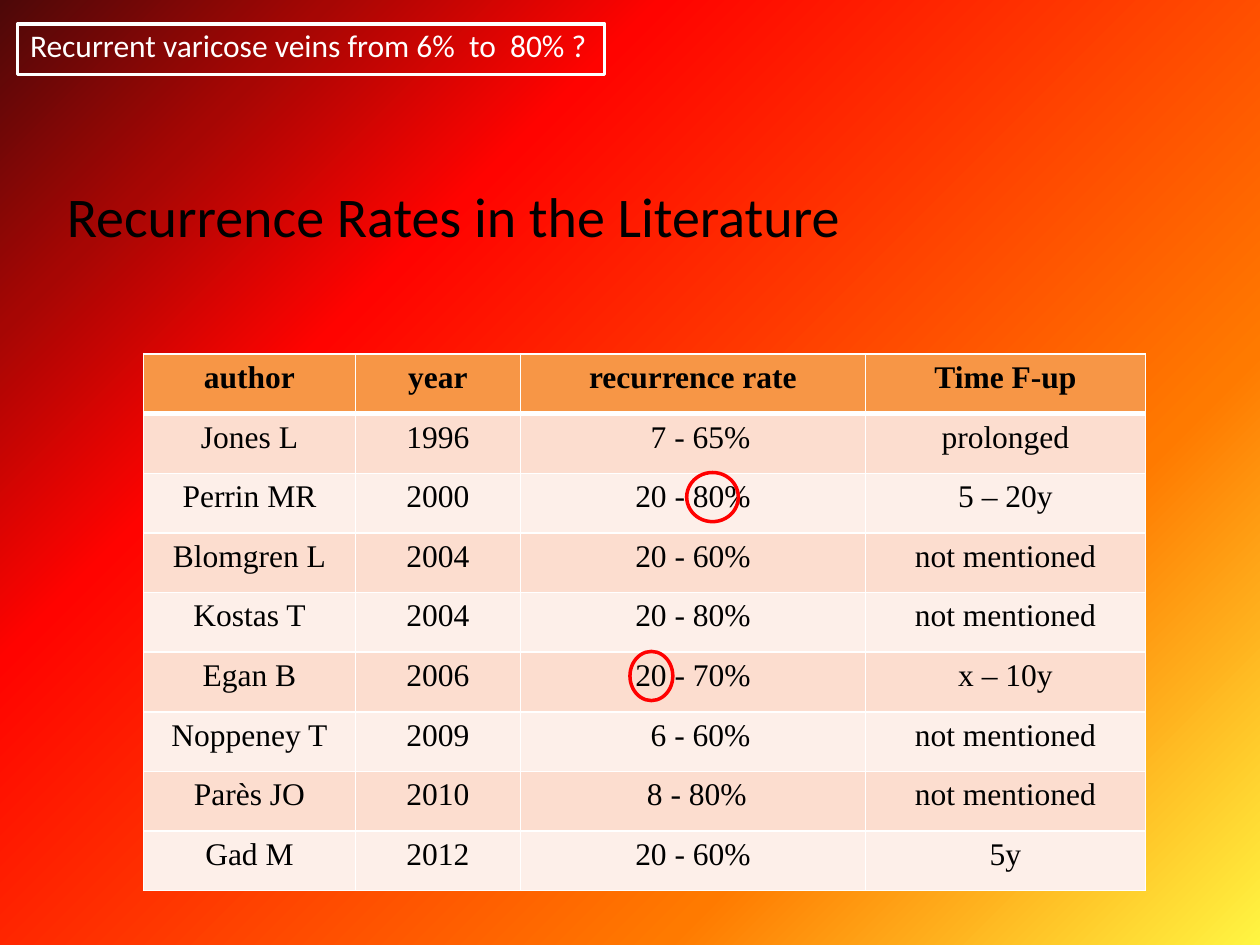
from lxml import etree
from pptx import Presentation
from pptx.dml.color import RGBColor
from pptx.enum.shapes import MSO_SHAPE
from pptx.enum.text import MSO_ANCHOR, MSO_AUTO_SIZE, PP_ALIGN
from pptx.oxml.ns import qn
from pptx.util import Inches, Pt

RECTANGLE, OVAL = MSO_SHAPE.RECTANGLE, MSO_SHAPE.OVAL
LEFT, CENTER = PP_ALIGN.LEFT, PP_ALIGN.CENTER
TOP = MSO_ANCHOR.TOP
FIT_SHAPE = MSO_AUTO_SIZE.SHAPE_TO_FIT_TEXT

BLACK = RGBColor(0x00, 0x00, 0x00)
WHITE = RGBColor(0xFF, 0xFF, 0xFF)
RED = RGBColor(0xFF, 0x00, 0x00)
ORANGE = RGBColor(0xF7, 0x96, 0x46)
PEACH = RGBColor(0xFC, 0xDD, 0xCF)
PALE_PEACH = RGBColor(0xFD, 0xEF, 0xE9)
BACKGROUND_STOPS = [
    (0, RGBColor(0xFF, 0xF5, 0x42)),
    (27, RGBColor(0xFF, 0x7A, 0x00)),
    (70, RGBColor(0xFF, 0x03, 0x00)),
    (85, RGBColor(0xA6, 0x06, 0x04)),
    (100, RGBColor(0x4D, 0x08, 0x08)),
]

TITLE = "Recurrence Rates in the Literature"
QUESTION = "Recurrent varicose veins from 6%  to  80% ?"
STUDIES = [
    ("author", "year", "recurrence rate", "Time F-up"),
    ("Jones L", "1996", "7 - 65%", "prolonged"),
    ("Perrin MR", "2000", "20 - 80%", "5 – 20y"),
    ("Blomgren L", "2004", "20 - 60%", "not mentioned"),
    ("Kostas T", "2004", "20 - 80%", "not mentioned"),
    ("Egan B", "2006", "20 - 70%", "x – 10y"),
    ("Noppeney T", "2009", "6 - 60%", "not mentioned"),
    ("Parès JO", "2010", "8 - 80%", "not mentioned"),
    ("Gad M", "2012", "20 - 60%", "5y"),
]
RATE_INDENTS = {"7 - 65%": 0.12, "6 - 60%": 0.12, "8 - 80%": 0.06}
COLUMN_WIDTHS = [1.68, 1.31, 2.74, 2.22]
TABLE_LEFT, TABLE_TOP, TABLE_HEIGHT = 1.14, 2.81, 4.26
RATE_MARKS = [(5, 5.17, 0.34, 0.39), (5.45, 3.75, 0.41, 0.39)]


def box(*lengths):
    return [Inches(length) for length in lengths]


def write(frame, text, size, font, color, align=LEFT, bold=False):
    frame.text = text
    paragraph = frame.paragraphs[0]
    paragraph.alignment = align
    run = paragraph.runs[0]
    run.font.size, run.font.name = Pt(size), font
    run.font.color.rgb, run.font.bold = color, bold


def add_outline(shapes, kind, bounds, color):
    outline = shapes.add_shape(kind, *box(*bounds))
    outline.shadow.inherit = False
    outline.fill.background()
    outline.line.color.rgb = color
    outline.line.width = Pt(2)


def fill_background(slide):
    fill = slide.background.fill
    fill.gradient()
    fill.gradient_angle = 135
    stops = slide.element.find(".//" + qn("a:gsLst"))
    for stop in list(stops):
        stops.remove(stop)
    for position, color in BACKGROUND_STOPS:
        stop = etree.SubElement(stops, qn("a:gs"), pos=str(position * 1000))
        etree.SubElement(stop, qn("a:srgbClr"), val=str(color))


def set_borders(cell, widths):
    properties = cell._tc.get_or_add_tcPr()
    for index, (side, width) in enumerate(widths.items()):
        line = etree.Element(qn("a:" + side), w=str(Pt(width)))
        solid = etree.SubElement(line, qn("a:solidFill"))
        etree.SubElement(solid, qn("a:srgbClr"), val=str(WHITE))
        properties.insert(index, line)


def add_studies(slide):
    row_count = len(STUDIES)
    bounds = box(TABLE_LEFT, TABLE_TOP, sum(COLUMN_WIDTHS), TABLE_HEIGHT)
    table = slide.shapes.add_table(row_count, len(COLUMN_WIDTHS), *bounds).table
    for column, width in zip(table.columns, COLUMN_WIDTHS):
        column.width = Inches(width)
    for row_index, study in enumerate(STUDIES):
        table.rows[row_index].height = Inches(TABLE_HEIGHT / row_count)
        header = row_index == 0
        band = ORANGE if header else PEACH if row_index % 2 else PALE_PEACH
        borders = {"lnL": 1, "lnR": 1, "lnT": 3 if row_index == 1 else 1,
                   "lnB": 3 if header else 1}
        for column_index, value in enumerate(study):
            cell = table.cell(row_index, column_index)
            write(cell.text_frame, value, 18, "Times New Roman", BLACK, CENTER, header)
            cell.margin_left = Inches(0.1 + RATE_INDENTS.get(value, 0))
            cell.fill.solid()
            cell.fill.fore_color.rgb = band
            set_borders(cell, borders)


def add_title(slide):
    title = slide.shapes.title
    title.left, title.top, title.width, title.height = box(0.43, 1.39, 9.4, 0.64)
    frame = title.text_frame
    write(frame, TITLE, 32, "Calibri", BLACK)
    frame.vertical_anchor = TOP
    frame.word_wrap = False
    frame.auto_size = FIT_SHAPE


def add_question(slide):
    banner = slide.shapes.add_group_shape()
    add_outline(banner.shapes, RECTANGLE, (0.14, 0.19, 4.66, 0.4), WHITE)
    question = banner.shapes.add_textbox(*box(0.14, 0.16, 4.67, 0.4))
    write(question.text_frame, QUESTION, 18, "Calibri", WHITE)
    question.text_frame.word_wrap = False
    question.text_frame.auto_size = FIT_SHAPE


def main():
    deck = Presentation()
    deck.slide_width, deck.slide_height = box(10, 7.5)
    slide = deck.slides.add_slide(deck.slide_layouts[5])
    fill_background(slide)
    add_studies(slide)
    add_title(slide)
    add_question(slide)
    for bounds in RATE_MARKS:
        add_outline(slide.shapes, OVAL, bounds, RED)
    deck.save("out.pptx")


if __name__ == "__main__":
    main()
